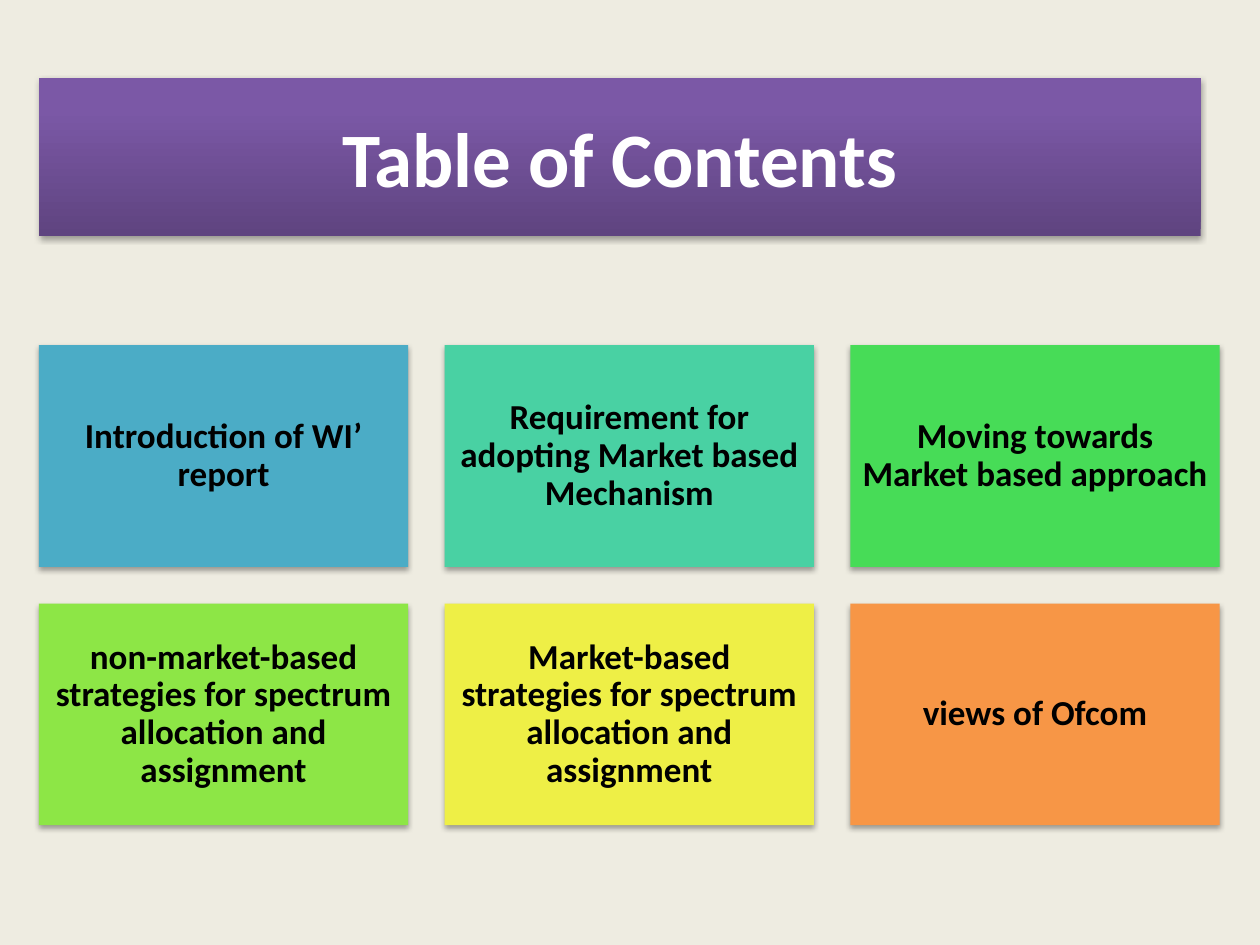
from copy import deepcopy
from dataclasses import dataclass

from pptx import Presentation
from pptx.dml.color import RGBColor as Color
from pptx.enum.shapes import MSO_SHAPE as Shape
from pptx.enum.text import MSO_ANCHOR as Anchor, PP_ALIGN as Align
from pptx.oxml import parse_xml
from pptx.oxml.ns import nsdecls, qn
from pptx.util import Inches, Pt


@dataclass(frozen=True)
class Theme:
    font: str = "Calibri"
    background: str = "EEECE1"
    title_text: str = "FFFFFF"
    topic_text: str = "000000"
    title_size: int = 44
    topic_size: int = 20
    title_gradient: tuple = ((0, "5F4480"), (0.8, "7B58A6"), (1, "7C57A8"))


THEME = Theme()

# Topics in reading order, each with its tile colour
TOPICS = [
    ("Introduction of WI’ report", "4BACC6"),
    ("Requirement for adopting Market based Mechanism", "49D1A3"),
    ("Moving towards Market based approach", "47DC57"),
    ("non-market-based strategies for spectrum allocation and assignment", "8DE646"),
    ("Market-based strategies for spectrum allocation and assignment", "EEEF46"),
    ("views of Ofcom", "F79646"),
]

# Tile grid, in inches
COLUMNS = 3
LEFT, GRID_TOP = 0.31, 2.74
TILE_WIDTH, TILE_HEIGHT = 2.93, 1.76
GAP = 0.29


def add_shadow(box):
    box.shadow.inherit = False
    effects = box._element.spPr.find(qn("a:effectLst"))
    effects.append(parse_xml(
        f'<a:outerShdw {nsdecls("a")} blurRad="40000" dist="23000" dir="5400000" '
        'rotWithShape="0"><a:srgbClr val="000000"><a:alpha val="35000"/>'
        '</a:srgbClr></a:outerShdw>'))


def add_box(page, left, top, width, height, text, size, color):
    """Add a shadowed, borderless rectangle with centred bold text."""
    box = page.shapes.add_shape(
        Shape.RECTANGLE, Inches(left), Inches(top), Inches(width), Inches(height))
    box.line.fill.background()
    add_shadow(box)
    frame = box.text_frame
    frame.word_wrap = True
    frame.vertical_anchor = Anchor.MIDDLE
    para = frame.paragraphs[0]
    para.text = text
    para.alignment = Align.CENTER
    para.font.name = THEME.font
    para.font.size = Pt(size)
    para.font.bold = True
    para.font.color.rgb = Color.from_string(color)
    return box


def add_title(page, text):
    box = add_box(page, LEFT, 0.62, 9.22, 1.25, text,
                  THEME.title_size, THEME.title_text)
    box.fill.gradient()
    box.fill.gradient_angle = 90
    # A new gradient has two stops; the title bar needs three
    stops = box._element.spPr.find(qn("a:gradFill")).find(qn("a:gsLst"))
    stops.append(deepcopy(stops[0]))
    for stop, (position, color) in zip(box.fill.gradient_stops, THEME.title_gradient):
        stop.position = position
        stop.color.rgb = Color.from_string(color)


def add_topic(page, index, text, color):
    row, column = divmod(index, COLUMNS)
    box = add_box(page, LEFT + column * (TILE_WIDTH + GAP),
                  GRID_TOP + row * (TILE_HEIGHT + GAP),
                  TILE_WIDTH, TILE_HEIGHT, text, THEME.topic_size, THEME.topic_text)
    box.fill.solid()
    box.fill.fore_color.rgb = Color.from_string(color)
    frame = box.text_frame
    frame.margin_left = frame.margin_right = Inches(0.08)
    frame.margin_top = frame.margin_bottom = Inches(0.08)
    frame.paragraphs[0].line_spacing = 0.9


def main():
    deck = Presentation()
    deck.slide_width, deck.slide_height = Inches(10), Inches(7.5)
    page = deck.slides.add_slide(deck.slide_layouts[6])
    page.background.fill.solid()
    page.background.fill.fore_color.rgb = Color.from_string(THEME.background)

    add_title(page, "Table of Contents")
    for index, (text, color) in enumerate(TOPICS):
        add_topic(page, index, text, color)

    deck.save("out.pptx")


if __name__ == "__main__":
    main()
